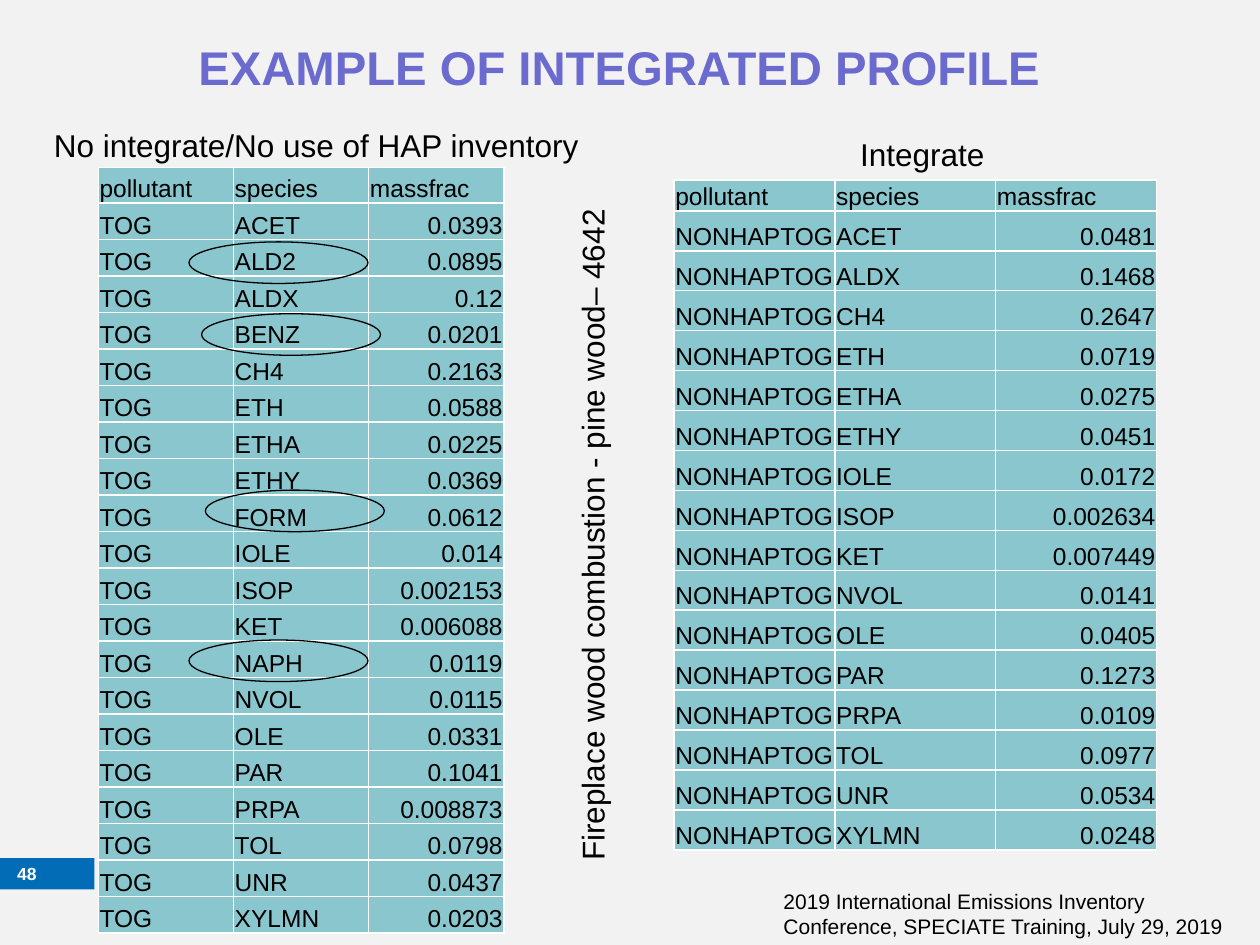
"""Build a slide comparing speciation profiles with and without HAP integration."""
from lxml import etree
from pptx import Presentation, util as u
from pptx.dml.color import RGBColor
from pptx.enum import shapes, text
from pptx.oxml.ns import qn

PAGE = RGBColor(0xF2, 0xF2, 0xF2)
BLUE = RGBColor(0x02, 0x6C, 0xB6)
VIOLET = RGBColor(0x6B, 0x6B, 0xCF)
TEAL = RGBColor(0x8A, 0xC6, 0xCD)
BLACK = RGBColor(0, 0, 0)
WHITE = RGBColor(0xFF, 0xFF, 0xFF)

presentation = Presentation()
presentation.slide_width, presentation.slide_height = u.Inches(10), u.Inches(7.5)
COLUMN = presentation.slide_width / 100
ROW = presentation.slide_height / 75
slide = presentation.slides.add_slide(presentation.slide_layouts[6])
slide.background.fill.solid()
slide.background.fill.fore_color.rgb = PAGE

LEFT, CENTER, RIGHT = text.PP_ALIGN.LEFT, text.PP_ALIGN.CENTER, text.PP_ALIGN.RIGHT
TOP, MIDDLE = text.MSO_ANCHOR.TOP, text.MSO_ANCHOR.MIDDLE
CELL_FORMAT = {"margin_left": u.Inches(0.01), "margin_right": u.Inches(0.01),
               "margin_top": u.Inches(0.01), "margin_bottom": 0,
               "vertical_anchor": text.MSO_ANCHOR.BOTTOM}


def grid(left, top, width, height):
    """Turn grid columns and rows into lengths."""
    return [u.Emu(round(n * unit)) for n, unit in
            zip((left, top, width, height), (COLUMN, ROW, COLUMN, ROW))]


def write(paragraph, words, size, color=BLACK, bold=False, align=LEFT):
    """Fill a paragraph with one formatted run."""
    paragraph.alignment = align
    run = paragraph.add_run()
    run.text = words
    for name, value in {"name": "Arial", "size": u.Pt(size), "bold": bold}.items():
        setattr(run.font, name, value)
    run.font.color.rgb = color


page_tab = slide.shapes.add_shape(shapes.MSO_SHAPE.RECTANGLE, *grid(0, 68.1, 7.5, 2.5))
page_tab.shadow.inherit = False
page_tab.fill.solid()
page_tab.fill.fore_color.rgb = BLUE
page_tab.line.fill.background()

labels = [
    ("EXAMPLE OF INTEGRATED PROFILE", (0, 2.2, 98.3, 6.1), 27, VIOLET, True, CENTER,
     {"word_wrap": True, "vertical_anchor": MIDDLE}, 0),
    ("48", (0, 68.1, 2.9, 2.5), 10, WHITE, True, RIGHT,
     {"word_wrap": True, "vertical_anchor": MIDDLE, "margin_left": 0,
      "margin_right": 0, "margin_top": 0, "margin_bottom": 0}, 0),
    ("No integrate/No use of HAP inventory", (3.3, 9.5, 44.1, 4), 18, BLACK, False, LEFT,
     {"word_wrap": False, "vertical_anchor": TOP}, 0),
    ("Integrate", (66.7, 10.2, 13, 4), 18, BLACK, False, CENTER,
     {"word_wrap": False, "vertical_anchor": TOP}, 0),
    ("Fireplace wood combustion - pine wood– 4642", (19.9, 40.2, 54.2, 4), 18, BLACK, False,
     LEFT, {"word_wrap": False, "vertical_anchor": TOP}, 270),
    ("2019 International Emissions Inventory Conference, SPECIATE Training, July 29, 2019",
     (61.2, 70, 37.4, 5), 12, BLACK, False, LEFT,
     {"word_wrap": True, "vertical_anchor": TOP}, 0),
]
for words, place, size, color, bold, align, frame_format, rotation in labels:
    box = slide.shapes.add_textbox(*grid(*place))
    box.rotation = rotation
    for name, value in frame_format.items():
        setattr(box.text_frame, name, value)
    write(box.text_frame.paragraphs[0], words, size, color, bold, align)

no_integrate = """ACET 0.0393 ALD2 0.0895 ALDX 0.12 BENZ 0.0201 CH4 0.2163 ETH 0.0588
ETHA 0.0225 ETHY 0.0369 FORM 0.0612 IOLE 0.014 ISOP 0.002153 KET 0.006088 NAPH 0.0119
NVOL 0.0115 OLE 0.0331 PAR 0.1041 PRPA 0.008873 TOL 0.0798 UNR 0.0437 XYLMN 0.0203""".split()
integrate = """ACET 0.0481 ALDX 0.1468 CH4 0.2647 ETH 0.0719 ETHA 0.0275 ETHY 0.0451
IOLE 0.0172 ISOP 0.002634 KET 0.007449 NVOL 0.0141 OLE 0.0405 PAR 0.1273 PRPA 0.0109
TOL 0.0977 UNR 0.0534 XYLMN 0.0248""".split()

profiles = [
    ("TOG", no_integrate, 7.8, 13.3, 32.2, 2.8, 2.9),
    ("NONHAPTOG", integrate, 53.5, 14.3, 38.3, 2.4, 3.17),
]
for pollutant, values, left, top, width, header_height, row_height in profiles:
    records = [("pollutant", "species", "massfrac")]
    records += [(pollutant, *pair) for pair in zip(values[::2], values[1::2])]
    height = header_height + row_height * (len(records) - 1)
    table = slide.shapes.add_table(len(records), 3, *grid(left, top, width, height)).table
    for column in table.columns:
        column.width = u.Emu(round(width * COLUMN / 3))
    for row_index, record in enumerate(records):
        rows_high = row_height if row_index else header_height
        table.rows[row_index].height = u.Emu(round(rows_high * ROW))
        for column_index, words in enumerate(record):
            cell = table.cell(row_index, column_index)
            for name, value in CELL_FORMAT.items():
                setattr(cell, name, value)
            align = RIGHT if row_index and column_index == 2 else LEFT
            write(cell.text_frame.paragraphs[0], words, 14, align=align)
            properties = cell._tc.get_or_add_tcPr()
            for side in ("lnL", "lnR", "lnT", "lnB"):
                border = etree.SubElement(properties, qn(f"a:{side}"), w=str(u.Pt(1)))
                fill = etree.SubElement(border, qn("a:solidFill"))
                etree.SubElement(fill, qn("a:srgbClr"), val=str(WHITE))
            cell.fill.solid()
            cell.fill.fore_color.rgb = TEAL

for left, top in [(15, 19.2), (15, 50.8), (16.3, 38.9), (16, 24.9)]:
    ring = slide.shapes.add_shape(shapes.MSO_SHAPE.OVAL, *grid(left, top, 14.2, 3.3))
    ring.shadow.inherit = False
    ring.fill.background()
    ring.line.color.rgb = BLACK
    ring.line.width = u.Pt(0.75)

presentation.save("out.pptx")
